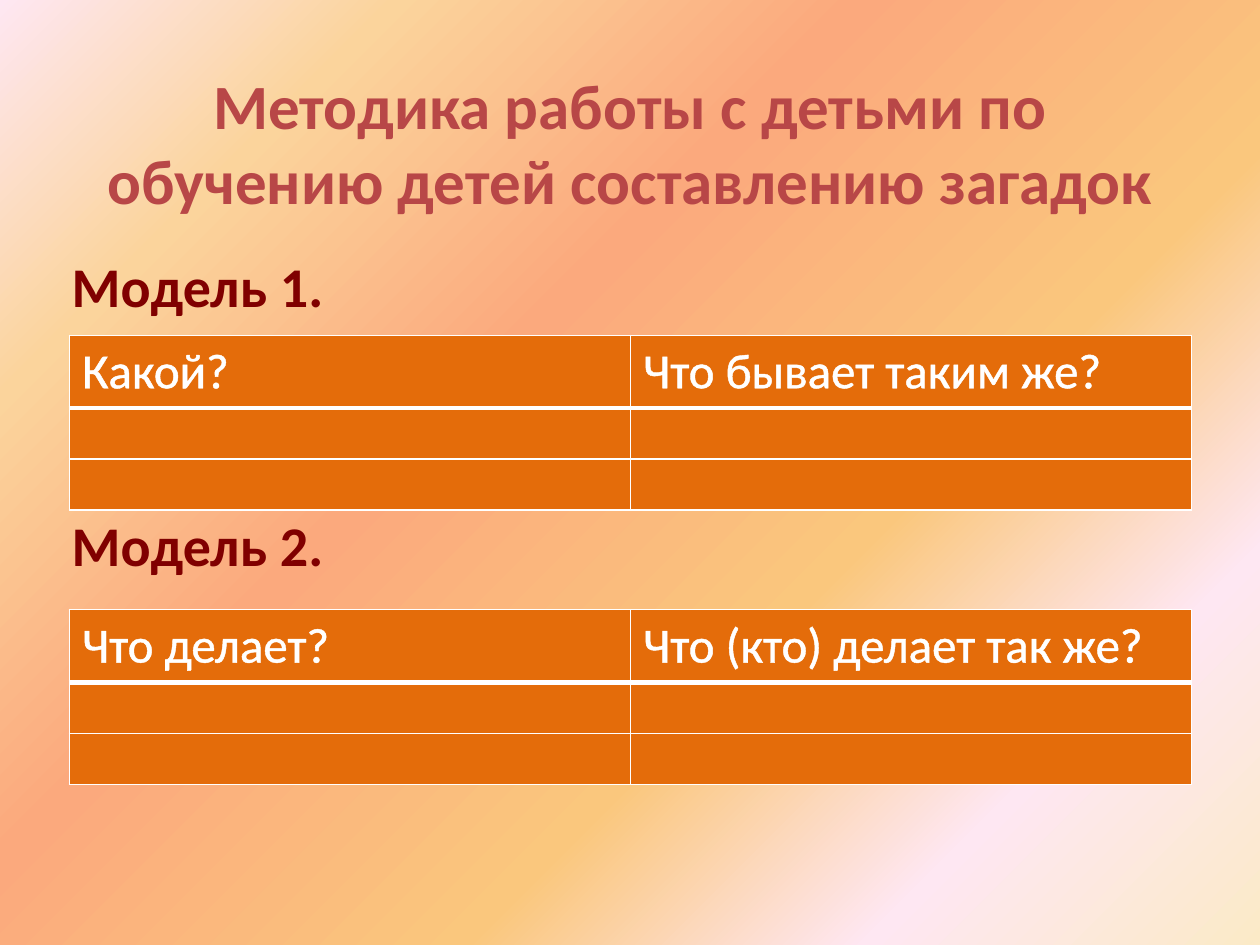
import dataclasses

import pptx
import pptx.dml.color
import pptx.enum.text
import pptx.oxml
import pptx.oxml.ns
import pptx.shapes.placeholder
import pptx.slide
import pptx.table
import pptx.text.text
import pptx.util
from lxml import etree

Cm = pptx.util.Cm
Pt = pptx.util.Pt
RGB = pptx.dml.color.RGBColor

ROSE = RGB(0xB8, 0x47, 0x47)
MAROON = RGB(0x80, 0x00, 0x00)
ORANGE = RGB(0xE4, 0x6C, 0x0A)
WHITE = RGB(0xFF, 0xFF, 0xFF)
STOPS = [
    (0, RGB(0xFB, 0xEA, 0xC7)),
    (18, RGB(0xFE, 0xE7, 0xF2)),
    (36, RGB(0xFA, 0xC7, 0x7D)),
    (61, RGB(0xFB, 0xA9, 0x7D)),
    (82, RGB(0xFB, 0xD4, 0x9C)),
    (100, RGB(0xFE, 0xE7, 0xF2)),
]
FONT = "Calibri"
LEFT, COL = Cm(1.4), Cm(11.31)
ROWS = [Cm(1.46), Cm(1.02), Cm(1.02)]


@dataclasses.dataclass
class Model:
    name: str
    top: pptx.util.Length
    gap: pptx.util.Length
    heads: tuple[str, str]


MODELS = [
    Model("Модель 1.", Cm(6.76), Pt(6.4), ("Какой?", "Что бывает таким же?")),
    Model("Модель 2.", Cm(12.29), Pt(109.5),
          ("Что делает?", "Что (кто) делает так же?")),
]


def style(para: pptx.text.text._Paragraph, size: int, color: RGB,
          bold: bool) -> None:
    for run in para.runs:
        run.font.name = FONT
        run.font.size = Pt(size)
        run.font.bold = bold
        run.font.color.rgb = color


def place(shape: pptx.shapes.placeholder.SlidePlaceholder,
          *box: float) -> None:
    shape.left, shape.top, shape.width, shape.height = map(Cm, box)


def line(tag: str, width: float) -> etree._Element:
    """Return a white outline element for a cell side or for text."""
    return pptx.oxml.parse_xml(
        f'<a:{tag} {pptx.oxml.ns.nsdecls("a")} w="{Pt(width)}">'
        f'<a:solidFill><a:srgbClr val="{WHITE}"/></a:solidFill></a:{tag}>')


def paint(slide: pptx.slide.Slide) -> None:
    """Give the slide its gradient background."""
    stops = "".join(
        f'<a:gs pos="{pos * 1000}"><a:srgbClr val="{color}"/></a:gs>'
        for pos, color in STOPS)
    back = pptx.oxml.parse_xml(
        f'<p:bg {pptx.oxml.ns.nsdecls("p", "a")}><p:bgPr>'
        f'<a:gradFill rotWithShape="1"><a:gsLst>{stops}</a:gsLst>'
        '<a:path path="circle"><a:fillToRect l="100000" t="100000"/></a:path>'
        '</a:gradFill><a:effectLst/></p:bgPr></p:bg>')
    slide.element.cSld.insert(0, back)


def edge(cell: pptx.table._Cell, row: int) -> None:
    """Rule a cell, with a thick line under the header row."""
    top = 3 if row == 1 else 1
    foot = 3 if row == 0 else 1
    props = cell._tc.get_or_add_tcPr()
    for tag, width in (("lnL", 1), ("lnR", 1), ("lnT", top), ("lnB", foot)):
        props.append(line(tag, width))


def grid(slide: pptx.slide.Slide, model: Model) -> None:
    table = slide.shapes.add_table(
        len(ROWS), len(model.heads), LEFT, model.top,
        COL * len(model.heads), sum(ROWS)).table
    table.horz_banding = False
    for col in table.columns:
        col.width = COL
    for r, high in enumerate(ROWS):
        table.rows[r].height = high
        for c, head in enumerate(model.heads):
            cell = table.cell(r, c)
            edge(cell, r)
            cell.fill.solid()
            cell.fill.fore_color.rgb = ORANGE
            if r == 0:
                cell.text_frame.text = head
                para = cell.text_frame.paragraphs[0]
                style(para, 28, WHITE, False)
                para.runs[0].font._element.insert(0, line("ln", 1.45))


def label(body: pptx.shapes.placeholder.SlidePlaceholder) -> None:
    """Write the model names, spaced to stand above their tables."""
    frame = body.text_frame
    frame.text = "\n".join(model.name for model in MODELS)
    for para, model in zip(frame.paragraphs, MODELS):
        style(para, 32, MAROON, True)
        para.space_before = model.gap
        props = para._p.get_or_add_pPr()
        props.set("marL", "0")
        props.set("indent", "0")
        etree.SubElement(props, pptx.oxml.ns.qn("a:buNone"))


def main() -> None:
    deck = pptx.Presentation()
    deck.slide_width, deck.slide_height = Cm(25.4), Cm(19.05)
    slide = deck.slides.add_slide(deck.slide_layouts[1])
    paint(slide)

    title, body = slide.placeholders
    place(title, 1.27, 0.76, 22.86, 4.19)
    title.text_frame.text = (
        "Методика работы с детьми по обучению детей составлению загадок")
    title.text_frame.vertical_anchor = pptx.enum.text.MSO_ANCHOR.MIDDLE
    para = title.text_frame.paragraphs[0]
    para.alignment = pptx.enum.text.PP_ALIGN.CENTER
    style(para, 36, ROSE, True)

    place(body, 1.19, 4.95, 22.86, 11.86)
    label(body)
    for model in MODELS:
        grid(slide, model)
    deck.save("out.pptx")


if __name__ == "__main__":
    main()
